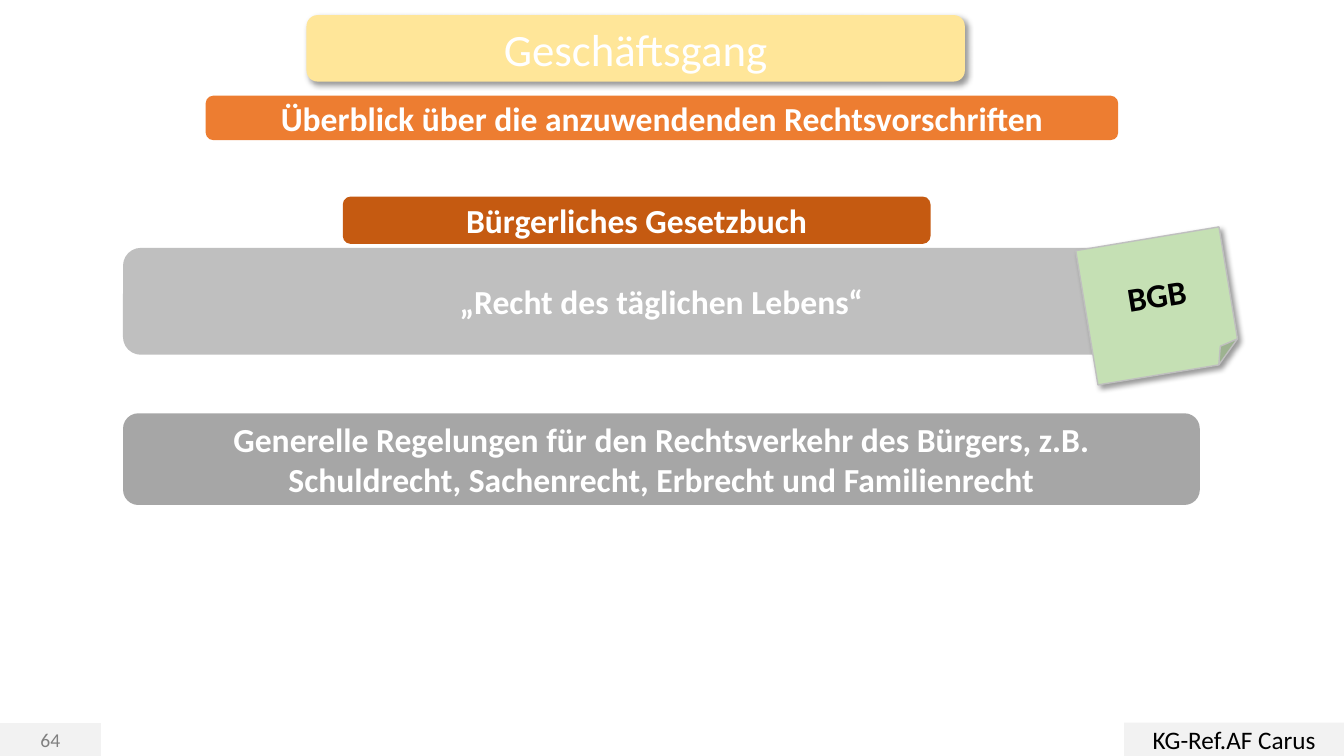
from lxml import etree
from pptx import Presentation
from pptx.dml.color import RGBColor
from pptx.enum.shapes import MSO_SHAPE
from pptx.enum.text import MSO_ANCHOR, PP_ALIGN
from pptx.oxml.ns import qn
from pptx.util import Pt

PX = 9144
ROUNDED = MSO_SHAPE.ROUNDED_RECTANGLE
RECTANGLE = MSO_SHAPE.RECTANGLE
FOLDED = MSO_SHAPE.FOLDED_CORNER
MIDDLE = MSO_ANCHOR.MIDDLE
CENTER = PP_ALIGN.CENTER

FONT = "Calibri"
COLORS = {
    "white": "FFFFFF",
    "black": "000000",
    "yellow": "FFE699",
    "orange": "ED7D31",
    "rust": "C55A11",
    "green": "C5E0B4",
    "pale_gray": "F2F2F2",
    "light_gray": "BFBFBF",
    "mid_gray": "A6A6A6",
    "number_gray": "808080",
}


def color(name):
    return RGBColor.from_string(COLORS[name])


def add_shadow(shape):
    effects = shape._element.spPr.find(qn("a:effectLst"))
    shadow = etree.SubElement(
        effects, qn("a:outerShdw"), blurRad=str(Pt(4)), dist=str(Pt(3)),
        dir="2700000", algn="tl", rotWithShape="0")
    shade = etree.SubElement(shadow, qn("a:srgbClr"), val=COLORS["black"])
    etree.SubElement(shade, qn("a:alpha"), val="40000")


def add_box(slide, kind, box, fill, lines, size=24, bold=True,
            text_color="white", outline=None):
    shape = slide.shapes.add_shape(kind, *(length * PX for length in box))
    shape.shadow.inherit = False
    shape.fill.solid()
    shape.fill.fore_color.rgb = color(fill)
    if outline:
        shape.line.color.rgb = color(outline)
        shape.line.width = Pt(1)
    else:
        shape.line.fill.background()
    frame = shape.text_frame
    frame.word_wrap = True
    frame.vertical_anchor = MIDDLE
    frame.margin_top = frame.margin_bottom = 0
    for index, text in enumerate(lines):
        paragraph = frame.add_paragraph() if index else frame.paragraphs[0]
        paragraph.alignment = CENTER
        run = paragraph.add_run()
        run.text = text
        run.font.name = FONT
        run.font.size = Pt(size)
        run.font.bold = bold
        run.font.color.rgb = color(text_color)
    return shape


def add_header(slide, box):
    left, top, width, height = box
    add_box(slide, ROUNDED, (left, top + 80, width, 44), "orange",
            ["Überblick über die anzuwendenden Rechtsvorschriften"])
    title = add_box(slide, ROUNDED, (left + 100, top, 653, 66), "yellow",
                    ["Geschäftsgang"], size=32, bold=False)
    add_shadow(title)


def add_law_section(slide, box):
    left, top, width, height = box
    add_box(slide, ROUNDED, (left + 218, top, 583, 47), "rust",
            ["Bürgerliches Gesetzbuch"])
    add_box(slide, ROUNDED, (left, top + 51, width, 106), "light_gray",
            ["„Recht des täglichen Lebens“"])
    add_box(slide, ROUNDED, (left, top + height - 91, width, 91), "mid_gray",
            ["Generelle Regelungen für den Rechtsverkehr des Bürgers, z.B.",
             "Schuldrecht, Sachenrecht, Erbrecht und Familienrecht"])
    note = add_box(slide, FOLDED, (left + width - 113, top + 41, 144, 135),
                   "green", ["BGB"], text_color="black", outline="light_gray")
    note.rotation = 350.6
    add_shadow(note)


def add_footer(slide, box):
    left, top, width, height = box
    add_box(slide, RECTANGLE, (left, top + 1, 100, height - 1), "pale_gray",
            ["64"], size=14, bold=False, text_color="number_gray",
            outline="pale_gray")
    add_box(slide, RECTANGLE, (left + width - 218, top, 218, height),
            "pale_gray", ["KG-Ref.AF Carus"], size=18, bold=False,
            text_color="black")


def main():
    presentation = Presentation()
    presentation.slide_width = 1333 * PX
    presentation.slide_height = 750 * PX
    slide = presentation.slides.add_slide(presentation.slide_layouts[6])
    add_header(slide, (204, 15, 905, 124))
    add_law_section(slide, (122, 195, 1068, 306))
    add_footer(slide, (0, 717, 1333, 33))
    presentation.save("out.pptx")


if __name__ == "__main__":
    main()
